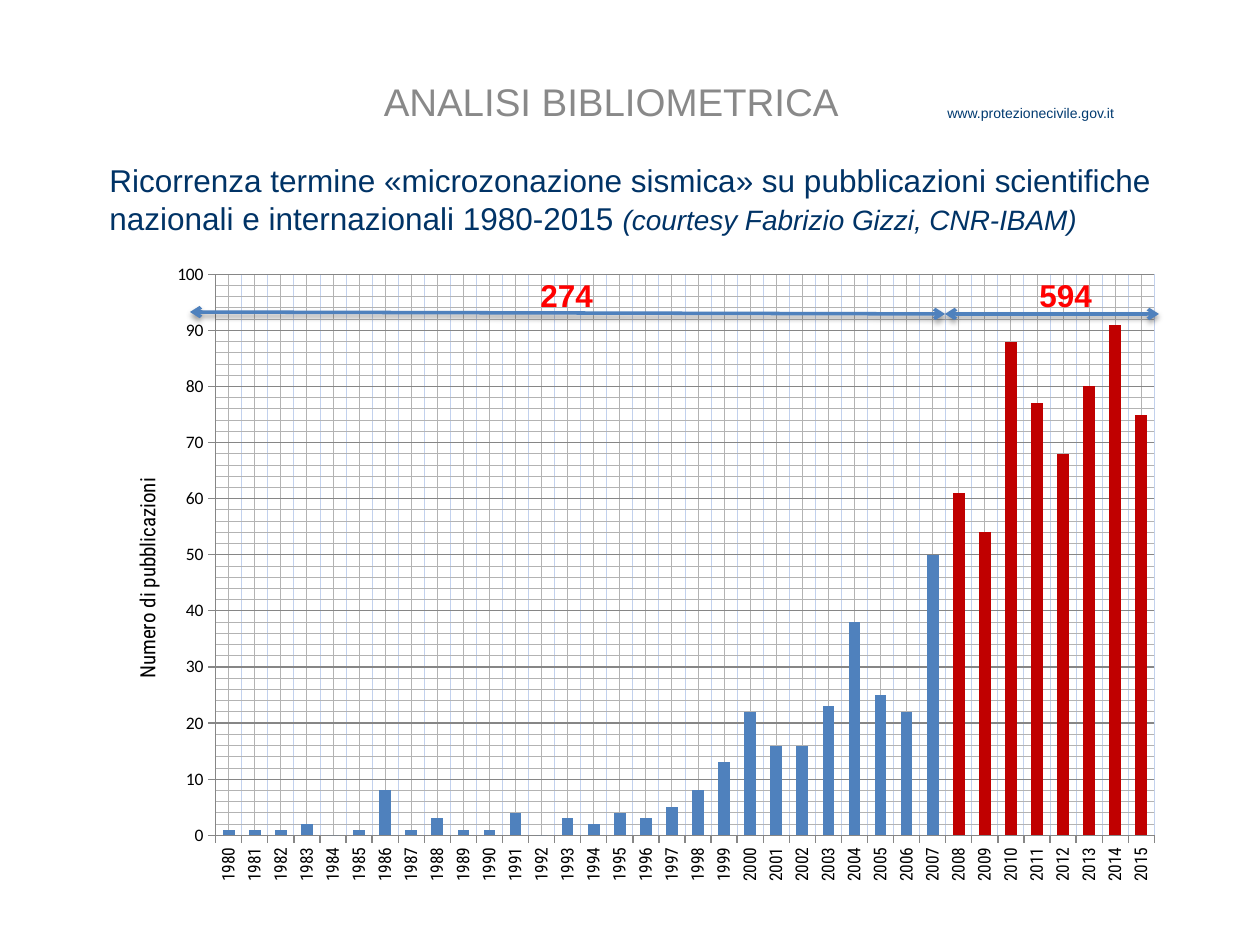
from lxml import etree
from pptx import Presentation
from pptx import util as u
from pptx.chart.data import CategoryChartData
from pptx.dml.color import RGBColor
from pptx.enum import chart as charts, shapes, text
from pptx.oxml import parse_xml
from pptx.oxml.ns import nsdecls, qn

PX = 914400 / 126


def px(*lengths):
    return [u.Emu(round(length * PX)) for length in lengths]


def color(value):
    return RGBColor.from_string(value)


presentation = Presentation()
presentation.slide_width, presentation.slide_height = px(1260, 945)
slide = presentation.slides.add_slide(presentation.slide_layouts[6])

counts = [1, 1, 1, 2, 0, 1, 8, 1, 3, 1, 1, 4, 0, 3, 2, 4, 3, 5,
          8, 13, 22, 16, 16, 23, 38, 25, 22, 50, 61, 54, 88, 77, 68, 80, 91, 75]
years = range(1980, 2016)
chart_data = CategoryChartData()
chart_data.categories = [str(year) for year in years]
chart_data.add_series("Series 1", counts)
chart = slide.shapes.add_chart(
    charts.XL_CHART_TYPE.COLUMN_CLUSTERED, *px(97, 255, 1079, 645), chart_data
).chart
chart.has_legend = False
chart.has_title = False
chart.font.name = "Calibri"
chart.font.size = u.Pt(10)
chart.font.color.rgb = color("000000")

plot = chart.plots[0]
plot.gap_width = 124
plot.vary_by_categories = False
series = plot.series[0]
series.format.fill.solid()
series.format.fill.fore_color.rgb = color("4F81BD")
for index, year in enumerate(years):
    if year >= 2008:
        fill = series.points[index].format.fill
        fill.solid()
        fill.fore_color.rgb = color("C00000")

category_axis, value_axis = chart.category_axis, chart.value_axis
value_axis.minimum_scale, value_axis.maximum_scale = 0, 100
value_axis.major_unit, value_axis.minor_unit = 10, 2
for axis, major_color, major_width in (
    (category_axis, "C2D1ED", 0.5), (value_axis, "868686", 0.75)
):
    axis.has_major_gridlines = True
    axis.has_minor_gridlines = True
    axis.major_tick_mark = charts.XL_TICK_MARK.OUTSIDE
    axis.minor_tick_mark = charts.XL_TICK_MARK.NONE
    axis.format.line.color.rgb = color("868686")
    axis.major_gridlines.format.line.color.rgb = color(major_color)
    axis.major_gridlines.format.line.width = u.Pt(major_width)
    axis.tick_labels.font.size = u.Pt(10)
    axis.tick_labels.font.color.rgb = color("000000")
    minor_gridlines = axis._element.find(qn("c:minorGridlines"))
    minor_gridlines.append(parse_xml(
        f'<c:spPr {nsdecls("c", "a")}><a:ln w="6350"><a:solidFill>'
        '<a:srgbClr val="B3B3B3"/></a:solidFill></a:ln></c:spPr>'))
value_axis.tick_labels.font.name = "Calibri"
category_axis.tick_labels.font.name = "Roboto Condensed"

axis_title = value_axis.axis_title
run = axis_title.text_frame.paragraphs[0].add_run()
run.text = "Numero di pubblicazioni"
run.font.name = "Roboto Condensed"
run.font.size = u.Pt(12)
run.font.bold = False
run.font.color.rgb = color("000000")
for rotated in (category_axis._element.find(qn("c:txPr")), axis_title._element):
    body = next(rotated.iter(qn("a:bodyPr")))
    body.set("rot", "-5400000")
    body.set("vert", "horz")

plot_area = chart._chartSpace.chart.plotArea
for parent, position, settings in (
    (plot_area, 0, dict(layoutTarget="inner", xMode="edge", yMode="edge",
                        x=0.11, y=0.03, w=0.87, h=0.87)),
    (axis_title._element, 1, dict(xMode="edge", yMode="edge", x=0.03, y=0.34)),
):
    layout = parent.find(qn("c:layout"))
    if layout is None:
        layout = etree.Element(qn("c:layout"))
        parent.insert(position, layout)
    manual = etree.SubElement(layout, qn("c:manualLayout"))
    for name, value in settings.items():
        etree.SubElement(manual, qn(f"c:{name}")).set("val", str(value))

for start_x, start_y, end_x, end_y in ((190, 312, 945, 314), (945, 314, 1159, 314)):
    arrow = slide.shapes.add_connector(
        shapes.MSO_CONNECTOR.STRAIGHT, *px(start_x, start_y, end_x, end_y))
    arrow.line.color.rgb = color("4F81BD")
    arrow.line.width = u.Pt(2)
    line = arrow.line._get_or_add_ln()
    for end in ("a:headEnd", "a:tailEnd"):
        etree.SubElement(line, qn(end)).set("type", "arrow")
    arrow._element.spPr.append(parse_xml(
        f'<a:effectLst {nsdecls("a")}><a:outerShdw blurRad="39370" dist="20320" '
        'dir="5400000" rotWithShape="0"><a:srgbClr val="000000">'
        '<a:alpha val="38000"/></a:srgbClr></a:outerShdw></a:effectLst>'))

left, right = text.PP_ALIGN.LEFT, text.PP_ALIGN.RIGHT
labels = [
    ((935, 98, 215, 30), True, left, "003A70",
     [("www.protezionecivile.gov.it", 8, False, False)]),
    ((139, 72, 712, 58), True, right, "898989",
     [("ANALISI BIBLIOMETRICA", 22, False, False)]),
    ((97, 155, 1079, 89), True, left, "003366",
     [("Ricorrenza termine «microzonazione sismica» su pubblicazioni scientifiche "
       "nazionali e internazionali 1980-2015 ", 18, False, False),
      ("(courtesy Fabrizio Gizzi, CNR-IBAM)", 16, False, True)]),
    ((528, 270, 78, 50), False, left, "FF0000", [("274", 18, True, False)]),
    ((1027, 270, 78, 50), False, left, "FF0000", [("594", 18, True, False)]),
]
for box, wrap, alignment, text_color, runs in labels:
    frame = slide.shapes.add_textbox(*px(*box)).text_frame
    frame.word_wrap = wrap
    paragraph = frame.paragraphs[0]
    paragraph.alignment = alignment
    for content, size, bold, italic in runs:
        run = paragraph.add_run()
        run.text = content
        run.font.name = "Arial"
        run.font.size = u.Pt(size)
        run.font.bold = bold
        run.font.italic = italic
        run.font.color.rgb = color(text_color)

presentation.save("out.pptx")
